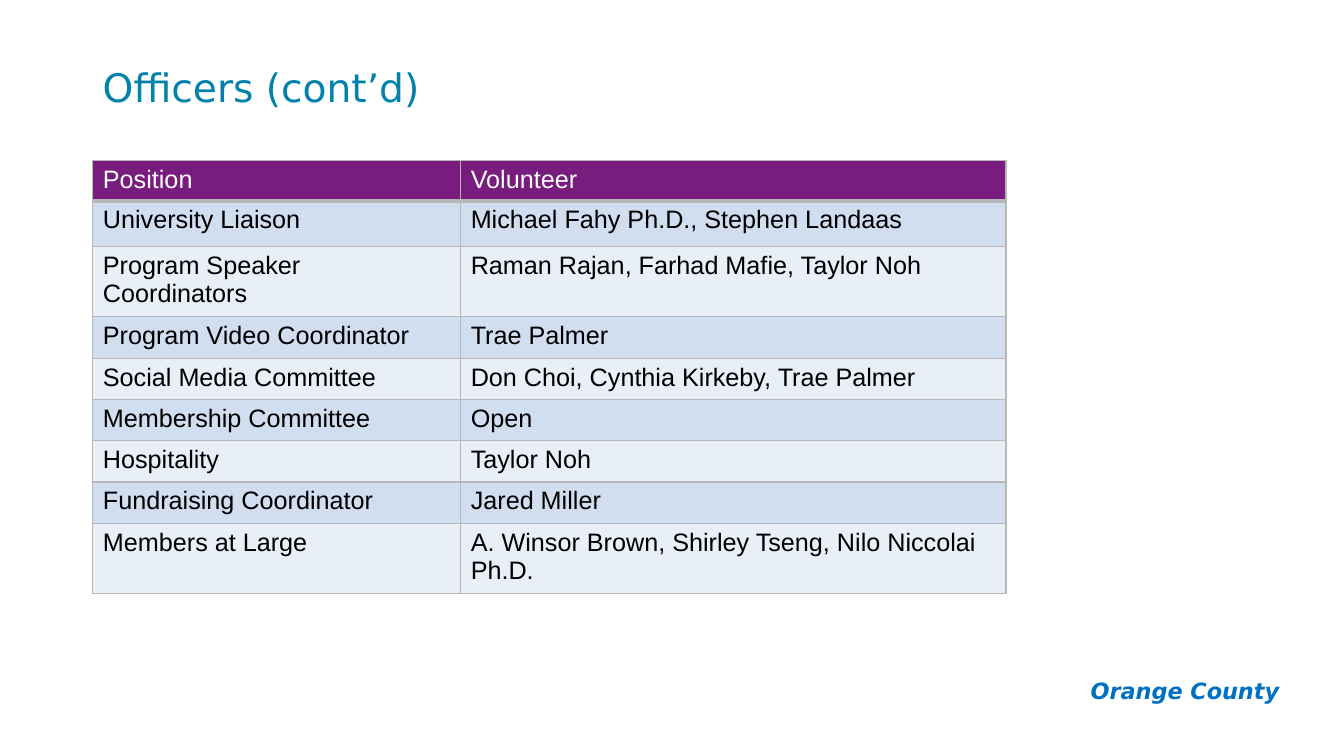
from dataclasses import dataclass

from lxml import etree
from pptx import Presentation
from pptx.dml.color import RGBColor
from pptx.enum.text import MSO_ANCHOR, PP_ALIGN
from pptx.oxml.ns import qn
from pptx.util import Cm, Pt

LEFT = PP_ALIGN.LEFT
RIGHT = PP_ALIGN.RIGHT
TOP = MSO_ANCHOR.TOP
MIDDLE = MSO_ANCHOR.MIDDLE


@dataclass(frozen=True)
class Theme:
    title: str = "0182AC"
    footer: str = "0070C0"
    head: str = "781C7D"
    bands: tuple = ("D0DEEF", "E9EFF7")
    white: str = "FFFFFF"
    black: str = "000000"
    rule: str = "B7B7B7"
    display: str = "DejaVu Sans"
    body: str = "Arial"
    title_size: int = 28
    body_size: int = 18
    footer_size: int = 16


OFFICERS = [
    ("Position", "Volunteer"),
    ("University Liaison", "Michael Fahy Ph.D., Stephen Landaas"),
    ("Program Speaker Coordinators", "Raman Rajan, Farhad Mafie, Taylor Noh"),
    ("Program Video Coordinator", "Trae Palmer"),
    ("Social Media Committee", "Don Choi, Cynthia Kirkeby, Trae Palmer"),
    ("Membership Committee", "Open"),
    ("Hospitality", "Taylor Noh"),
    ("Fundraising Coordinator", "Jared Miller"),
    ("Members at Large", "A. Winsor Brown, Shirley Tseng, Nilo Niccolai Ph.D."),
]
WIDTHS = [9.27, 13.74]
HEIGHTS = [0.91] + [1.14] * 2 + [1.04] * 6


class Page:
    def __init__(self, slide, theme):
        self.slide = slide
        self.theme = theme

    def style(self, para, font, size, color, strong=False):
        for run in para.runs:
            run.font.name = font
            run.font.size = Pt(size)
            run.font.color.rgb = RGBColor.from_string(color)
            run.font.bold = strong
            run.font.italic = strong

    def text(self, words, box, size, color, inset=0.13, anchor=TOP,
             align=LEFT, spacing=1.0, strong=False):
        frame = self.slide.shapes.add_textbox(*map(Cm, box)).text_frame
        frame.word_wrap = True
        frame.vertical_anchor = anchor
        frame.margin_left = frame.margin_right = Cm(0.25)
        frame.margin_top = frame.margin_bottom = Cm(inset)
        frame.text = words
        para = frame.paragraphs[0]
        para.alignment = align
        para.line_spacing = spacing
        self.style(para, self.theme.display, size, color, strong)

    def border(self, cell, widths):
        props = cell._tc.get_or_add_tcPr()
        for side, width in zip("LRTB", widths):
            line = etree.SubElement(props, qn(f"a:ln{side}"), w=str(Pt(width)))
            fill = etree.SubElement(line, qn("a:solidFill"))
            etree.SubElement(fill, qn("a:srgbClr"), val=self.theme.rule)

    def table(self, rows, left, top, widths, heights):
        theme = self.theme
        grid = self.slide.shapes.add_table(
            len(rows), len(widths), Cm(left), Cm(top),
            Cm(sum(widths)), Cm(sum(heights))).table
        for column, width in zip(grid.columns, widths):
            column.width = Cm(width)
        for row, height in zip(grid.rows, heights):
            row.height = Cm(height)
        for r, row in enumerate(rows):
            fill = theme.bands[(r - 1) % 2] if r else theme.head
            color = theme.black if r else theme.white
            edges = (1, 1, 3 if r == 1 else 1, 3 if r == 0 else 1)
            for c, words in enumerate(row):
                cell = grid.cell(r, c)
                self.border(cell, edges)
                cell.fill.solid()
                cell.fill.fore_color.rgb = RGBColor.from_string(fill)
                cell.text_frame.text = words
                self.style(cell.text_frame.paragraphs[0], theme.body,
                           theme.body_size, color)


def main():
    deck = Presentation()
    deck.slide_width = Cm(33.87)
    deck.slide_height = Cm(19.05)
    theme = Theme()
    page = Page(deck.slides.add_slide(deck.slide_layouts[6]), theme)
    page.text("Orange County", (26.7, 16.81, 5.79, 1.19), theme.footer_size,
              theme.footer, inset=0.25, align=RIGHT, strong=True)
    page.text("Officers (cont’d)", (2.34, 1.02, 29.21, 2.51), theme.title_size,
              theme.title, anchor=MIDDLE, spacing=0.9)
    page.table(OFFICERS, 2.34, 4.05, WIDTHS, HEIGHTS)
    deck.save("out.pptx")


if __name__ == "__main__":
    main()
